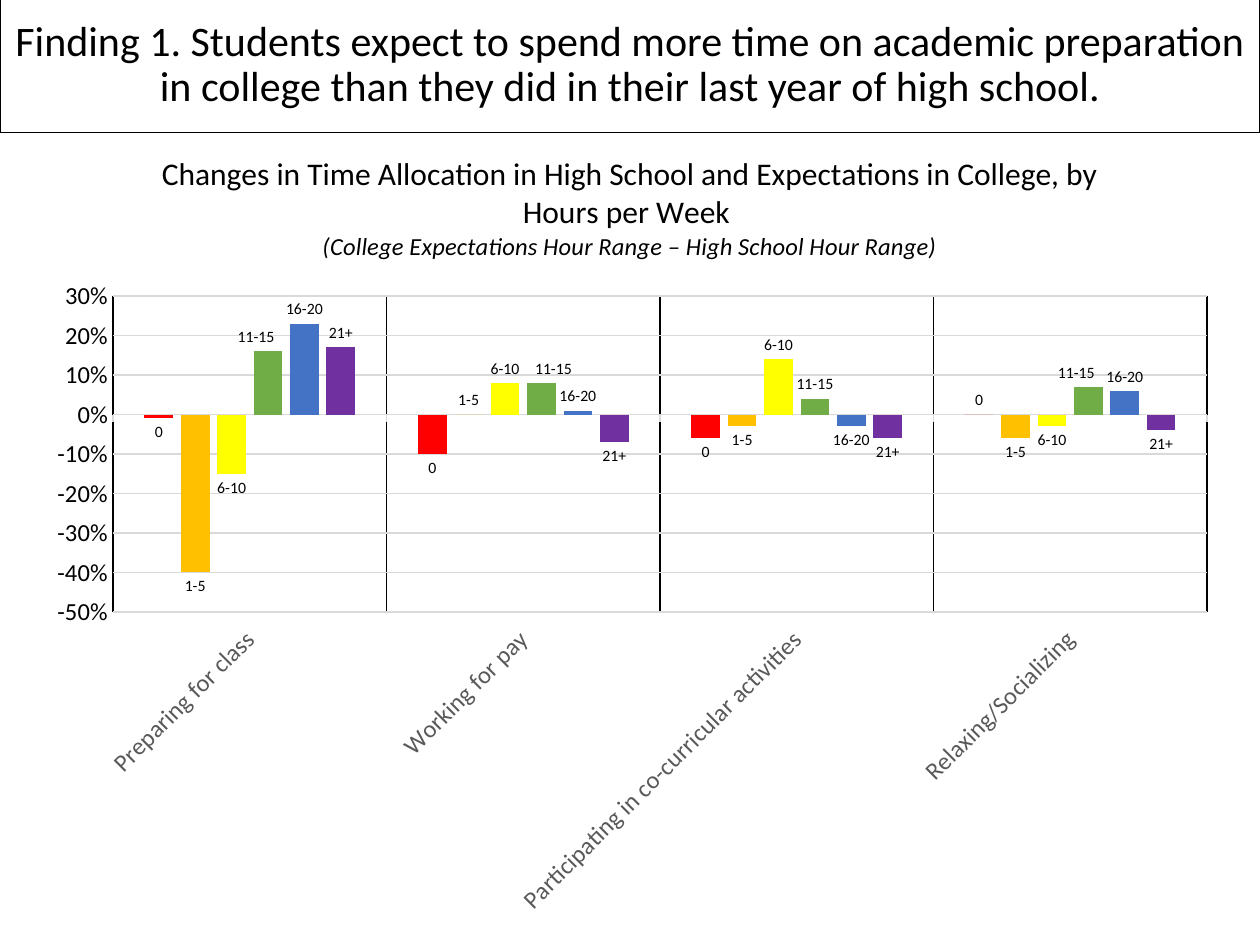
from lxml import etree
from pptx import Presentation
from pptx.chart.data import CategoryChartData
from pptx.dml.color import RGBColor
from pptx.enum.chart import (XL_CHART_TYPE, XL_LABEL_POSITION as LabelPos,
                             XL_TICK_LABEL_POSITION as TickPos, XL_TICK_MARK as Tick)
from pptx.enum.text import MSO_ANCHOR, MSO_AUTO_SIZE, PP_ALIGN
from pptx.oxml.ns import qn
from pptx.util import Inches, Pt

FONT = "Calibri"
TITLE = ("Finding 1. Students expect to spend more time on academic preparation "
         "in college than they did in their last year of high school.")
CHART_TITLE = [
    ("Changes in Time Allocation in High School and Expectations in College, by Hours per Week ",
     {"size": Pt(18), "italic": False}),
    ("(College Expectations Hour Range – High School Hour Range)",
     {"size": Pt(14), "italic": True}),
]
ACTIVITIES = ["Preparing for class", "Working for pay",
              "Participating in co-curricular activities", "Relaxing/Socializing"]
HOURS = [
    ("0", "FF0000", [-0.01, -0.1, -0.06, 0]),
    ("1-5", "FFC000", [-0.4, 0, -0.03, -0.06]),
    ("6-10", "FFFF00", [-0.15, 0.08, 0.14, -0.03]),
    ("11-15", "70AD47", [0.16, 0.08, 0.04, 0.07]),
    ("16-20", "4472C4", [0.23, 0.01, -0.03, 0.06]),
    ("21+", "7030A0", [0.17, -0.07, -0.06, -0.04]),
]
LABEL_SHIFTS = {"11-15": [-0.01, 0.01, 0, -0.01]}
PLOT_AREA = {"x": 0.07, "y": 0.21, "w": 0.91, "h": 0.39}


def rgb(color):
    return RGBColor.from_string(color)


def set_font(font, color="000000", **values):
    for name, value in {"name": FONT, "bold": False, **values}.items():
        setattr(font, name, value)
    font.color.rgb = rgb(color)


def set_line(line, color):
    line.color.rgb = rgb(color)
    line.width = Pt(0.75)


def manual_layout(layout, values, **modes):
    manual = etree.SubElement(layout, qn("c:manualLayout"))
    for name, value in {**modes, **values}.items():
        etree.SubElement(manual, qn(f"c:{name}")).set("val", str(value))


def add_title(slide, left, top, width, height):
    sp = slide.shapes.title
    sp.left, sp.top, sp.width, sp.height = left, top, width, height
    set_line(sp.line, "000000")
    tf = sp.text_frame
    tf.word_wrap, tf.auto_size = True, MSO_AUTO_SIZE.NONE
    tf.vertical_anchor = MSO_ANCHOR.MIDDLE
    p = tf.paragraphs[0]
    p.alignment, p.line_spacing = PP_ALIGN.CENTER, 0.9
    r = p.add_run()
    r.text = TITLE
    set_font(r.font, size=Pt(24))


def title_chart(chart):
    tf = chart.chart_title.text_frame
    for i, (text, style) in enumerate(CHART_TITLE):
        p = tf.add_paragraph() if i else tf.paragraphs[0]
        set_font(p.font, **style)
        r = p.add_run()
        r.text = text
        set_font(r.font, **style)
    chart.chart_title.include_in_layout = False


def format_axes(chart):
    cat, val = chart.category_axis, chart.value_axis
    for axis, grid, color in ((cat, "000000", "595959"), (val, "D9D9D9", "000000")):
        axis.has_major_gridlines = True
        set_line(axis.major_gridlines.format.line, grid)
        set_font(axis.tick_labels.font, color, size=Pt(14))
        axis.minor_tick_mark = Tick.NONE
    cat.tick_label_position = TickPos.LOW
    cat.major_tick_mark = Tick.OUTSIDE
    set_line(cat.format.line, "D9D9D9")
    body = cat._element.find(qn("c:txPr")).find(qn("a:bodyPr"))
    body.set("rot", str(-45 * 60000))
    body.set("vert", "horz")
    val.minimum_scale, val.maximum_scale, val.major_unit = -0.5, 0.3, 0.1
    val.major_tick_mark = Tick.NONE
    val.format.line.fill.background()
    val.tick_labels.number_format = "0%"
    val.tick_labels.number_format_is_linked = False


def shift_labels(series, shifts):
    """Move the series-name labels sideways by fractions of the chart width."""
    for i in range(len(shifts)):
        label = series.points[i].data_label
        set_font(label.font, size=Pt(9))
        label.position = LabelPos.OUTSIDE_END
    for element, shift in zip(series._element.iter(qn("c:dLbl")), shifts):
        element.find(qn("c:showVal")).set("val", "0")
        element.find(qn("c:showSerName")).set("val", "1")
        layout = etree.Element(qn("c:layout"))
        element.find(qn("c:idx")).addnext(layout)
        manual_layout(layout, {"x": shift, "y": 0})


def format_series(series, color):
    series.invert_if_negative = False
    series.format.fill.solid()
    series.format.fill.fore_color.rgb = rgb(color)
    labels = series.data_labels
    set_font(labels.font, size=Pt(9))
    for name, value in {"show_series_name": True, "show_value": False,
                        "number_format": "0%", "number_format_is_linked": False,
                        "position": LabelPos.OUTSIDE_END}.items():
        setattr(labels, name, value)
    if series.name in LABEL_SHIFTS:
        shift_labels(series, LABEL_SHIFTS[series.name])


def add_hours_chart(slide, left, top, width, height):
    data = CategoryChartData(number_format="0%")
    data.categories = ACTIVITIES
    for name, _, values in HOURS:
        data.add_series(name, values)
    chart = slide.shapes.add_chart(XL_CHART_TYPE.COLUMN_CLUSTERED,
                                   left, top, width, height, data).chart
    chart.has_legend = False
    set_font(chart.font, size=Pt(10))
    title_chart(chart)
    format_axes(chart)
    plot = chart.plots[0]
    plot.vary_by_categories, plot.gap_width, plot.overlap = False, 219, -27
    for series, (_, color, _) in zip(plot.series, HOURS):
        format_series(series, color)
    area = chart._chartSpace.chart.plotArea
    layout = area.find(qn("c:layout"))
    if layout is None:
        layout = etree.Element(qn("c:layout"))
        area.insert(0, layout)
    manual_layout(layout, PLOT_AREA, layoutTarget="inner", xMode="edge", yMode="edge")


def main():
    prs = Presentation()
    prs.slide_width, prs.slide_height = Inches(10), Inches(7.5)
    slide = prs.slides.add_slide(prs.slide_layouts[5])
    add_title(slide, Inches(0), Inches(-0.01), Inches(10), Inches(1.06))
    add_hours_chart(slide, Inches(0.23), Inches(1), Inches(9.54), Inches(6.43))
    prs.save("out.pptx")


if __name__ == "__main__":
    main()
